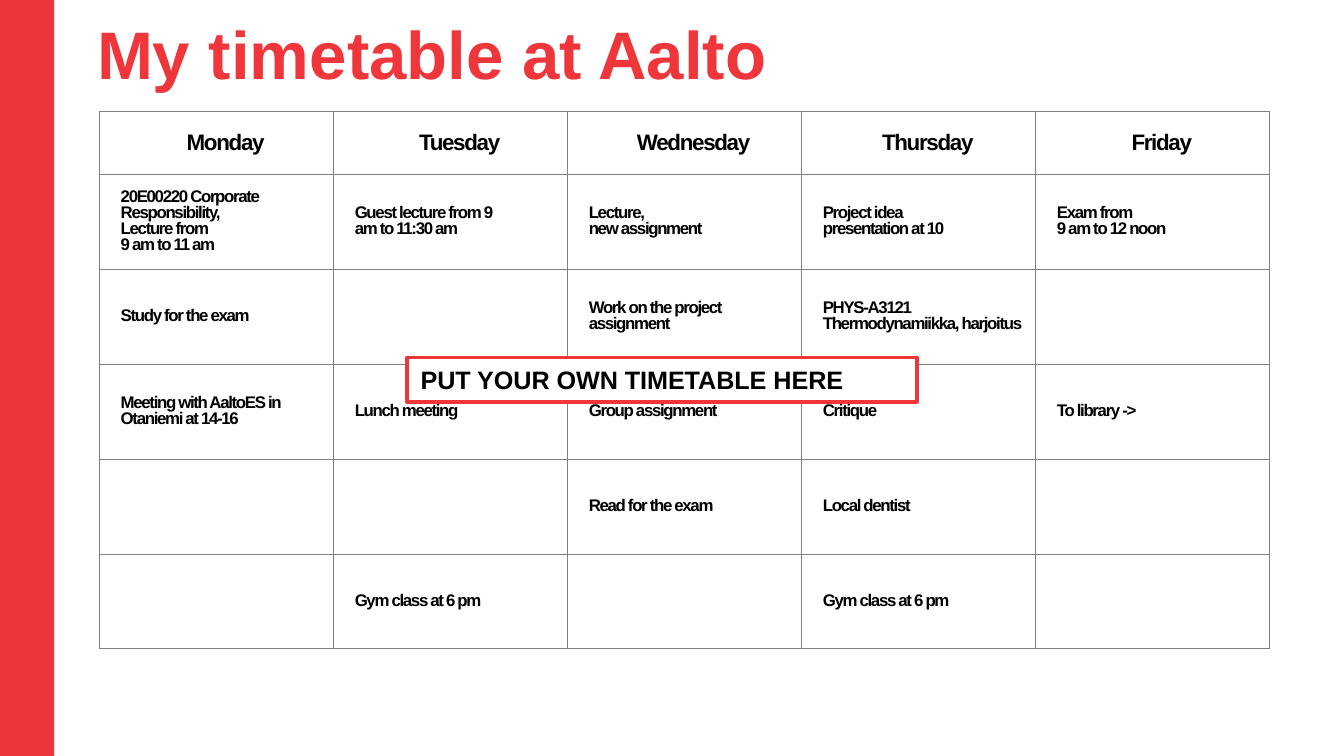
from lxml.etree import SubElement
from pptx import Presentation
from pptx.dml.color import RGBColor
from pptx.enum.shapes import MSO_SHAPE
from pptx.enum.text import MSO_ANCHOR, PP_ALIGN
from pptx.oxml.ns import qn
from pptx.util import Pt

DAYS = ["Monday", "Tuesday", "Wednesday", "Thursday", "Friday"]
PLANS = [
    ["20E00220 Corporate Responsibility,\nLecture from\n9 am to 11 am",
     "Guest lecture from 9\vam to 11:30 am", "Lecture,\nnew assignment",
     "Project idea\npresentation at 10", "Exam from\n9 am to 12 noon"],
    ["Study for the exam", "", "Work on the project assignment",
     "PHYS-A3121\nThermodynamiikka, harjoitus", ""],
    ["Meeting with AaltoES in Otaniemi at 14-16", "Lunch meeting",
     "Group assignment", "Critique", "To library ->"],
    ["", "", "Read for the exam", "Local dentist", ""],
    ["", "Gym class at 6 pm", "", "Gym class at 6 pm", ""],
]


def color(code):
    """Turn a hex string into a colour."""
    return RGBColor.from_string(code)


def style(para, size, code="000000", track=None):
    """Format the runs of a paragraph in bold Arial."""
    for run in para.runs:
        font = run.font
        font.name, font.size, font.bold = "Arial", Pt(size), True
        font.color.rgb = color(code)
        if track is not None:
            run._r.get_or_add_rPr().set("spc", str(track))


def add_box(slide, box, fill, line=None):
    """Add a plain rectangle with an optional outline."""
    shape = slide.shapes.add_shape(MSO_SHAPE.RECTANGLE, *map(Pt, box))
    shape.shadow.inherit = False
    shape.fill.solid()
    shape.fill.fore_color.rgb = color(fill)
    if line:
        shape.line.color.rgb = color(line)
        shape.line.width = Pt(2)
    else:
        shape.line.fill.background()
    return shape


def add_title(slide, text):
    """Place and format the title."""
    title = slide.shapes.title
    title.left, title.top, title.width, title.height = map(Pt, (52, 10, 644, 89))
    frame = title.text_frame
    frame.margin_left = frame.margin_right = 0
    frame.margin_top = frame.margin_bottom = 0
    frame.vertical_anchor = MSO_ANCHOR.TOP
    frame.text = text
    para = frame.paragraphs[0]
    para.alignment = PP_ALIGN.LEFT
    para.line_spacing = Pt(40)
    style(para, 36, "EF363B")


def add_edges(cell):
    """Draw thin grey borders around a cell."""
    props = cell._tc.get_or_add_tcPr()
    for side in ("lnL", "lnR", "lnT", "lnB"):
        line = SubElement(props, qn(f"a:{side}"), w=str(Pt(0.5)))
        fill = SubElement(line, qn("a:solidFill"))
        SubElement(fill, qn("a:srgbClr"), val="808080")


def fill_cell(cell, text, head):
    """Write one cell as a day heading or a plan."""
    add_edges(cell)
    cell.fill.background()
    cell.margin_left = Pt(10 if head else 11.5)
    cell.margin_right = cell.margin_top = cell.margin_bottom = 0
    cell.vertical_anchor = MSO_ANCHOR.MIDDLE
    cell.text_frame.text = text
    for para in cell.text_frame.paragraphs:
        if head:
            para.alignment = PP_ALIGN.CENTER
        else:
            para.line_spacing = 0.85
        style(para, 12 if head else 9, track=-70)


def add_grid(slide, rows):
    """Add the week table."""
    box = map(Pt, (53.2, 59.6, 627, 288))
    table = slide.shapes.add_table(len(rows), len(DAYS), *box).table
    table.first_row = table.horz_banding = False
    for col in table.columns:
        col.width = Pt(125.4)
    for r, texts in enumerate(rows):
        table.rows[r].height = Pt(50.8 if r else 34)
        for c, text in enumerate(texts):
            fill_cell(table.cell(r, c), text, r == 0)


def add_note(slide, text):
    """Add the framed note over the table."""
    shape = add_box(slide, (218.2, 191.5, 273, 23.8), "FFFFFF", "EF363B")
    frame = shape.text_frame
    frame.word_wrap = True
    frame.vertical_anchor = MSO_ANCHOR.MIDDLE
    frame.text = text
    para = frame.paragraphs[0]
    para.alignment = PP_ALIGN.LEFT
    style(para, 13.5)


def main():
    """Build the timetable slide."""
    deck = Presentation()
    deck.slide_width, deck.slide_height = Pt(720), Pt(405)
    slide = deck.slides.add_slide(deck.slide_layouts[5])
    add_box(slide, (0, 0, 29, 405), "EE353B")
    add_title(slide, "My timetable at Aalto")
    add_grid(slide, [DAYS] + PLANS)
    add_note(slide, "PUT YOUR OWN TIMETABLE HERE")
    deck.save("out.pptx")


if __name__ == "__main__":
    main()
